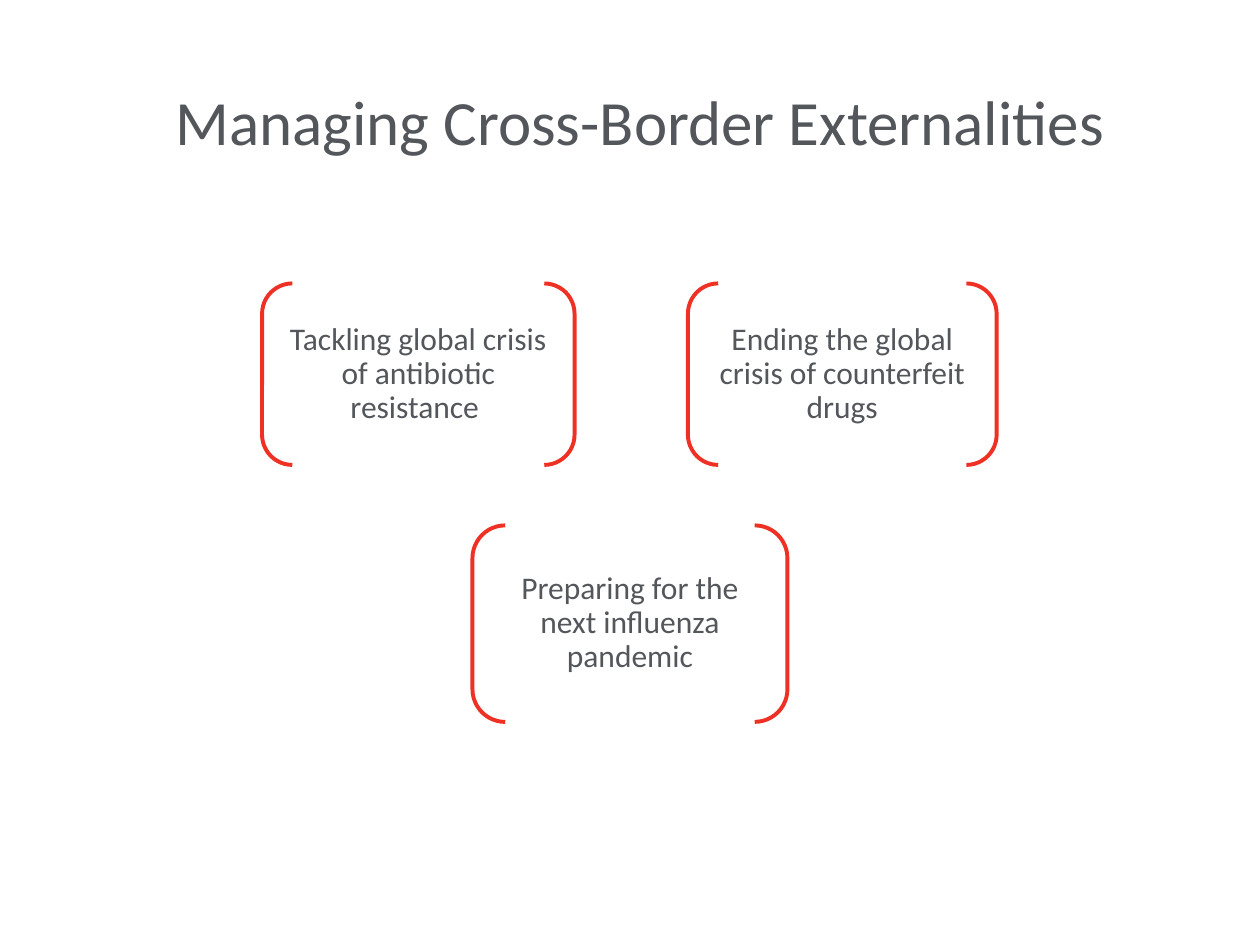
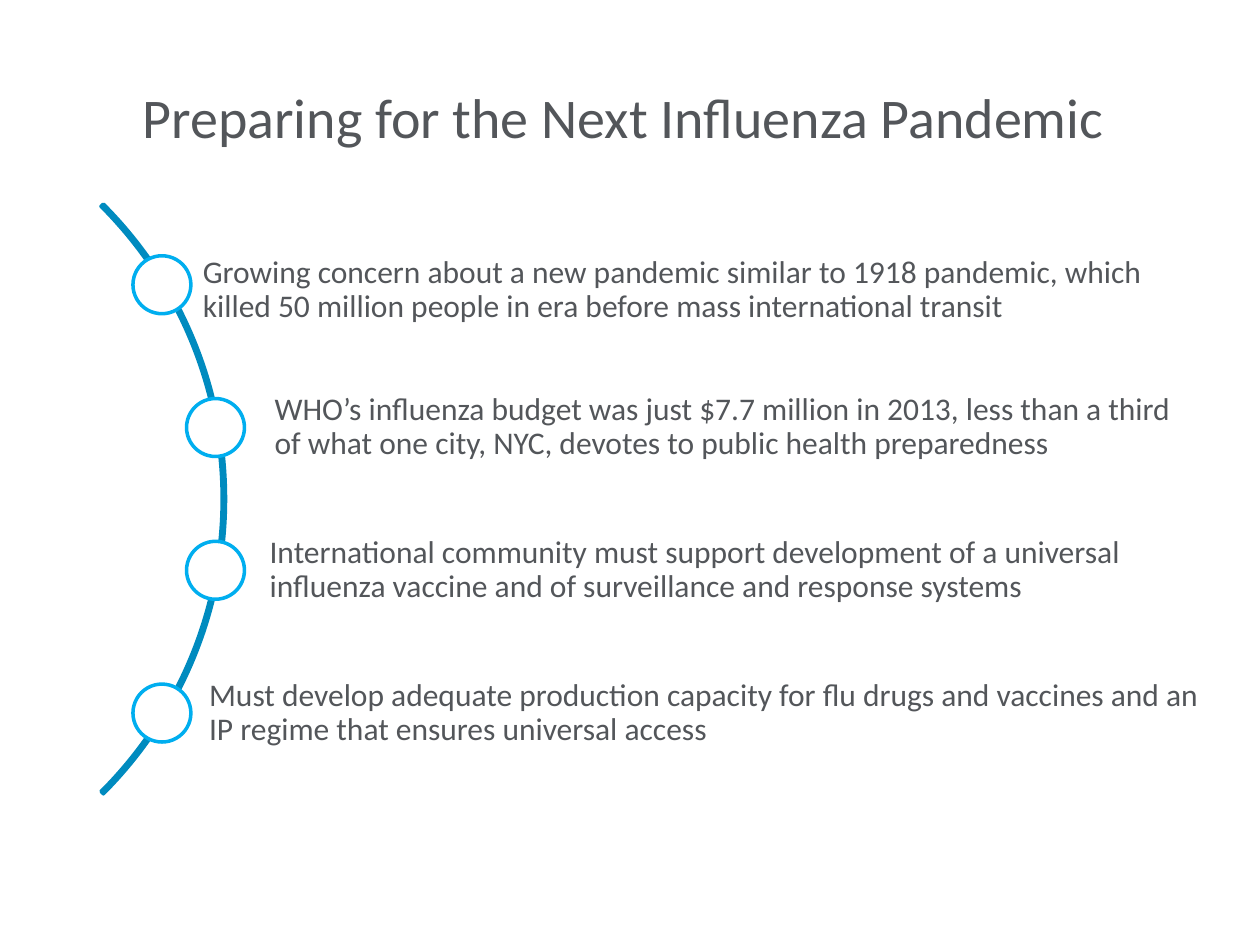
import math

from pptx import Presentation, util as u
from pptx.dml.color import RGBColor
from pptx.enum import shapes, text

WHITE = RGBColor(0xFF, 0xFF, 0xFF)
GREY = RGBColor(0x53, 0x56, 0x5A)
RED = RGBColor(0xEE, 0x31, 0x24)
DARK_BLUE = RGBColor(0x00, 0x8B, 0xBF)
LIGHT_BLUE = RGBColor(0x00, 0xAE, 0xEF)

FONT = "Calibri"
COLS, ROWS = 100, 75
CELL = u.Inches(0.1)  # side of one square grid cell

CRISES = [  # column, row, columns, rows inside the region, wording
    (0, 0, 24.8, 14.4, "Tackling global crisis of antibiotic resistance "),
    (33.8, 0, 24.5, 14.4, "Ending the global crisis of counterfeit drugs"),
    (16.7, 19.2, 25, 15.6, "Preparing for the next influenza pandemic"),
]
STEPS = [  # text column, rows above the marker, text columns, wording
    (10.1, 1.1, 83.8, "Growing concern about a new pandemic similar to 1918 pandemic, "
     "which killed 50 million people in era before mass international transit"),
    (15.8, 1.5, 79.6, "WHO’s influenza budget was just $7.7 million in 2013, less than a "
     "third of what one city, NYC, devotes to public health preparedness"),
    (15.4, 1.5, 80.4, "International community must support development of a universal "
     "influenza vaccine and of surveillance and response systems"),
    (10.6, 1.5, 85.6, "Must develop adequate production capacity for flu drugs and vaccines "
     "and an IP regime that ensures universal access"),
]


def cells(*counts):
    return [round(n * CELL) for n in counts]


def write(sp, wording, size, align, insets=None):
    tf = sp.text_frame
    tf.text = wording
    tf.word_wrap = True
    tf.auto_size = text.MSO_AUTO_SIZE.NONE
    tf.vertical_anchor = text.MSO_ANCHOR.MIDDLE
    if insets:
        tf.margin_left, tf.margin_top, tf.margin_right, tf.margin_bottom = cells(*insets)
    p = tf.paragraphs[0]
    p.alignment = align
    font = p.runs[0].font
    font.name, font.size, font.color.rgb = FONT, u.Pt(size), GREY
    return p


def outlined(s, kind, box, line, width, fill=WHITE):
    sp = s.shapes.add_shape(kind, *cells(*box))
    sp.shadow.inherit = False
    if fill is None:
        sp.fill.background()
    else:
        sp.fill.solid()
        sp.fill.fore_color.rgb = fill
    sp.line.color.rgb, sp.line.width = line, u.Pt(width)
    return sp


def titled_slide(prs, title, box, size):
    s = prs.slides.add_slide(prs.slide_layouts[5])
    sp = s.shapes.title
    sp.left, sp.top, sp.width, sp.height = cells(*box)
    write(sp, title, size, text.PP_ALIGN.CENTER)
    return s


def bracket_group(s, left, top):
    for col, row, width, height, wording in CRISES:
        sp = outlined(s, shapes.MSO_SHAPE.DOUBLE_BRACKET,
                      (left + col, top + row, width, height), RED, 2.25)
        p = write(sp, wording, 18, text.PP_ALIGN.CENTER, (0.7,) * 4)
        p.line_spacing = 0.9


def arc_timeline(s, center_x, center_y, radius):
    """Place the steps at equal heights along a quarter arc."""
    arc = outlined(s, shapes.MSO_SHAPE.BLOCK_ARC,
                   (center_x - radius, center_y - radius, 2 * radius, 2 * radius),
                   DARK_BLUE, 2, fill=None)
    for i, value in enumerate((189, 27, 0.004)):
        arc.adjustments[i] = value

    marker, pitch, text_rows = 4.6, 11.33, 7.6
    for i, (col, rise, width, wording) in enumerate(STEPS):
        dy = (i - (len(STEPS) - 1) / 2) * pitch
        dx = math.sqrt((radius - 0.3) ** 2 - dy ** 2)
        top = center_y + dy - marker / 2
        tb = s.shapes.add_textbox(*cells(col, top - rise, width, text_rows))
        p = write(tb, wording, 18, text.PP_ALIGN.LEFT, (6, 0.5, 0.5, 0.5))
        p.line_spacing = 0.9
        outlined(s, shapes.MSO_SHAPE.OVAL,
                 (center_x + dx - marker / 2, top, marker, marker), LIGHT_BLUE, 2)


def main():
    prs = Presentation()
    prs.slide_width, prs.slide_height = cells(COLS, ROWS)

    s = titled_slide(prs, "Managing Cross-Border Externalities", (5.8, 3.3, 90, 12.5), 36)
    bracket_group(s, left=20.8, top=22.5)

    s = titled_slide(prs, "Preparing for the Next Influenza Pandemic ", (5, 3, 90, 12.5), 32)
    arc_timeline(s, center_x=-15.2, center_y=39.6, radius=33.1)

    prs.save("out.pptx")


if __name__ == "__main__":
    main()
